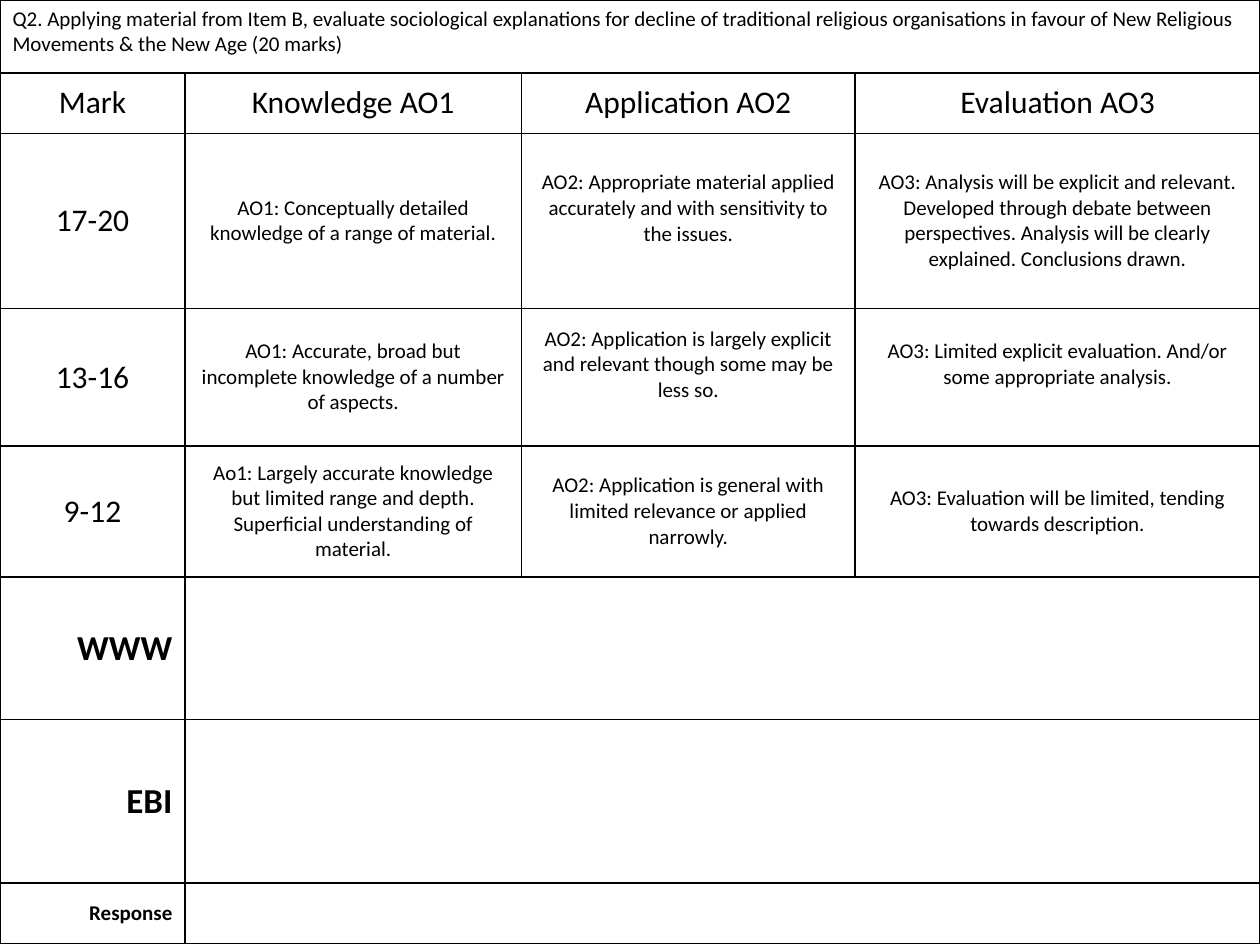
from lxml import etree
from pptx import Presentation
from pptx.dml.color import RGBColor
from pptx.enum.text import MSO_ANCHOR, PP_ALIGN
from pptx.oxml.ns import qn
from pptx.util import Cm, Pt

BLACK = RGBColor(0, 0, 0)
LEFT, CENTER, RIGHT = PP_ALIGN.LEFT, PP_ALIGN.CENTER, PP_ALIGN.RIGHT
TOP, MIDDLE = MSO_ANCHOR.TOP, MSO_ANCHOR.MIDDLE

QUESTION = (
    "Q2. Applying material from Item B, evaluate sociological explanations for "
    "decline of traditional religious organisations in favour of New Religious "
    "Movements & the New Age (20 marks)"
)
HEADINGS = ["Mark", "Knowledge AO1", "Application AO2", "Evaluation AO3"]
BANDS = [
    ["17-20",
     "AO1: Conceptually detailed knowledge of a range of material.",
     "AO2: Appropriate material applied accurately and with sensitivity to the issues.",
     "AO3: Analysis will be explicit and relevant. Developed through debate between "
     "perspectives. Analysis will be clearly explained. Conclusions drawn."],
    ["13-16",
     "AO1: Accurate, broad but incomplete knowledge of a number of aspects.",
     "AO2: Application is largely explicit and relevant though some may be less so.",
     "AO3: Limited explicit evaluation. And/or some appropriate analysis."],
    ["9-12",
     "Ao1: Largely accurate knowledge but limited range and depth. "
     "Superficial understanding of material.",
     "AO2: Application is general with limited relevance or applied narrowly.",
     "AO3: Evaluation will be limited, tending towards description."],
]
FEEDBACK = [("WWW", 20), ("EBI", 20), ("Response", 12)]

COLUMN_WIDTHS = [3.73, 6.78, 6.73, 8.16]
ROW_HEIGHTS = [1.47, 1.22, 3.53, 2.77, 2.64, 2.87, 3.3, 1.22]
RAISED_CELLS = [(2, 2), (3, 2), (3, 3)]  # text sits half a line above the middle
RAISED_MARGIN = Cm(0.64)


def write(cell, text, size, align=CENTER, anchor=MIDDLE, bold=False):
    cell.text_frame.text = text
    cell.vertical_anchor = anchor
    paragraph = cell.text_frame.paragraphs[0]
    paragraph.alignment = align
    font = paragraph.runs[0].font
    font.name = "Calibri"
    font.size = Pt(size)
    font.bold = bold
    font.color.rgb = BLACK


def clear_with_border(cell):
    """Remove the style's fill and draw a thin black line on all four sides."""
    cell.fill.background()
    properties = cell._tc.get_or_add_tcPr()
    for position, side in enumerate(("a:lnL", "a:lnR", "a:lnT", "a:lnB")):
        line = etree.Element(qn(side), w=str(Pt(1)))
        fill = etree.SubElement(line, qn("a:solidFill"))
        etree.SubElement(fill, qn("a:srgbClr"), val=str(BLACK))
        properties.insert(position, line)


def main():
    deck = Presentation()
    deck.slide_width, deck.slide_height = Cm(25.4), Cm(19.05)
    page = deck.slides.add_slide(deck.slide_layouts[6])
    table = page.shapes.add_table(
        len(ROW_HEIGHTS), len(COLUMN_WIDTHS), 0, 0, deck.slide_width, deck.slide_height
    ).table
    table.first_row = table.horz_banding = False
    for column, width in zip(table.columns, COLUMN_WIDTHS):
        column.width = Cm(width)
    for row, height in zip(table.rows, ROW_HEIGHTS):
        row.height = Cm(height)
    for cell in table.iter_cells():
        clear_with_border(cell)

    last = len(COLUMN_WIDTHS) - 1
    table.cell(0, 0).merge(table.cell(0, last))
    write(table.cell(0, 0), QUESTION, 12, LEFT, TOP)

    for column, heading in enumerate(HEADINGS):
        write(table.cell(1, column), heading, 18)

    for row, band in enumerate(BANDS, start=2):
        for column, text in enumerate(band):
            write(table.cell(row, column), text, 12 if column else 18)
    for row, column in RAISED_CELLS:
        table.cell(row, column).margin_bottom = RAISED_MARGIN

    for row, (label, size) in enumerate(FEEDBACK, start=2 + len(BANDS)):
        table.cell(row, 1).merge(table.cell(row, last))
        write(table.cell(row, 0), label, size, RIGHT, bold=True)

    deck.save("out.pptx")


if __name__ == "__main__":
    main()
